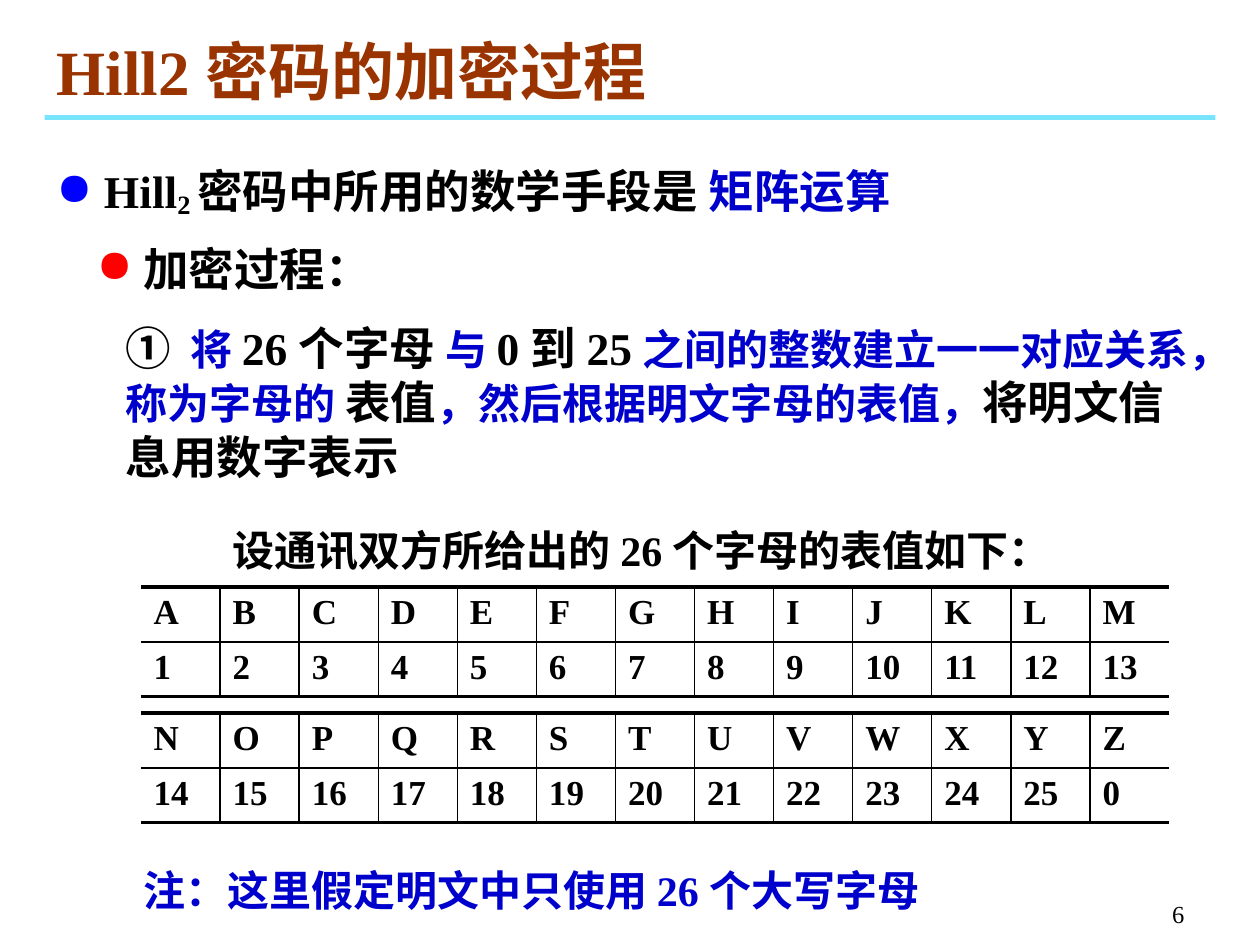
from lxml import etree
from pptx import Presentation
from pptx.dml.color import RGBColor
from pptx.enum.shapes import MSO_SHAPE
from pptx.enum.text import MSO_ANCHOR, MSO_AUTO_SIZE, PP_ALIGN
from pptx.oxml.ns import qn
from pptx.util import Pt

RECTANGLE = MSO_SHAPE.RECTANGLE
LEFT, CENTER, RIGHT = PP_ALIGN.LEFT, PP_ALIGN.CENTER, PP_ALIGN.RIGHT
TOP, BOTTOM = MSO_ANCHOR.TOP, MSO_ANCHOR.BOTTOM
GROW, FIXED = MSO_AUTO_SIZE.SHAPE_TO_FIT_TEXT, MSO_AUTO_SIZE.NONE
TITLE_ONLY = 5

SERIF = "Times New Roman"
BLACK, BLUE, BROWN = "000000", "0000CC", "993300"
THICK, THIN = 2.25, 1
COLUMN_WIDTH, ROW_HEIGHT = 45.2, 31.3


def color(value):
    return RGBColor.from_string(value)


def add_element(parent, tag, **attributes):
    element = etree.SubElement(parent, qn(tag))
    for name, value in attributes.items():
        element.set(name, str(value))
    return element


def add_span(para, text, size, fill=BLACK, font=SERIF, bold=True, baseline=0):
    span = para.add_run()
    span.text = text
    values = {"size": Pt(size), "name": font, "bold": bold}
    for name, value in values.items():
        setattr(span.font, name, value)
    span.font.color.rgb = color(fill)
    if baseline:
        span.font._element.set("baseline", str(baseline * 1000))


def add_bullet(para, fill):
    properties = para._p.get_or_add_pPr()
    properties.set("marL", "0")
    properties.set("indent", "0")
    bullet_color = add_element(properties, "a:buClr")
    add_element(bullet_color, "a:srgbClr", val=fill)
    add_element(properties, "a:buChar", char="●")


def place(box, bounds):
    for name, value in zip(("left", "top", "width", "height"), bounds):
        setattr(box, name, Pt(value))


def fill_text(box, spans, align=LEFT, anchor=TOP, spacing=None, bullet=None, fit=GROW):
    frame = box.text_frame
    values = {"word_wrap": True, "auto_size": fit, "vertical_anchor": anchor}
    for name, value in values.items():
        setattr(frame, name, value)
    para = frame.paragraphs[0]
    para.alignment = align
    if spacing:
        para.line_spacing = spacing
    if bullet:
        add_bullet(para, bullet)
    for span in spans:
        add_span(para, **span)


def add_text(page, bounds, spans, **layout):
    box = page.shapes.add_textbox(*map(Pt, bounds))
    fill_text(box, spans, **layout)


def add_rule(page):
    rule = page.shapes.add_shape(RECTANGLE, *map(Pt, (25.5, 65.8, 669, 2.7)))
    rule.shadow.inherit = False
    rule.fill.solid()
    rule.fill.fore_color.rgb = color("00CCFF")
    rule.line.fill.background()
    swatch = rule._element.spPr.find(".//" + qn("a:srgbClr"))
    add_element(swatch, "a:alpha", val=53000)


def set_borders(cell, widths):
    properties = cell._tc.get_or_add_tcPr()
    for position, (side, width) in enumerate(widths.items()):
        line = etree.Element(qn("a:ln" + side))
        properties.insert(position, line)
        if width:
            line.set("w", str(Pt(width)))
            fill = add_element(line, "a:solidFill")
            add_element(fill, "a:srgbClr", val=BLACK)
        else:
            add_element(line, "a:noFill")


def add_letter_table(page, top, letters, numbers):
    count = len(letters)
    bounds = (80.6, top, count * COLUMN_WIDTH, 2 * ROW_HEIGHT)
    table = page.shapes.add_table(2, count, *map(Pt, bounds)).table
    table.first_row = False
    table.horz_banding = False
    for column in table.columns:
        column.width = Pt(COLUMN_WIDTH)
    for row, values in enumerate((letters, numbers)):
        table.rows[row].height = Pt(ROW_HEIGHT)
        for index, value in enumerate(values):
            cell = table.cell(row, index)
            cell.fill.background()
            add_span(cell.text_frame.paragraphs[0], str(value), 20)
            set_borders(cell, {
                "L": THIN if index else 0,
                "R": THIN if index < count - 1 else 0,
                "T": THIN if row else THICK,
                "B": THICK if row else THIN,
            })


def main():
    deck = Presentation()
    deck.slide_width, deck.slide_height = Pt(720), Pt(540)
    page = deck.slides.add_slide(deck.slide_layouts[TITLE_ONLY])

    add_rule(page)
    title = page.shapes.title
    place(title, (25.2, 15.1, 420, 50.4))
    fill_text(title, [dict(text="Hill2 密码的加密过程", size=36, fill=BROWN)], anchor=BOTTOM)

    add_text(page, (534, 498, 150, 36), [dict(text="6", size=14, bold=False)],
             align=RIGHT, anchor=BOTTOM, fit=FIXED)
    add_text(page, (25.2, 82.8, 612, 44.6), [
        dict(text=" Hill", size=26),
        dict(text="2 ", size=26, baseline=-15),
        dict(text="密码中所用的数学手段是 ", size=26),
        dict(text="矩阵运算", size=26, fill=BLUE),
    ], spacing=1.2, bullet="0000FF")
    add_text(page, (48.2, 128.2, 612, 44.6), [dict(text=" 加密过程：", size=26)],
             spacing=1.2, bullet="FF0000")
    add_text(page, (64.8, 179.3, 629.3, 100.8), [
        dict(text="①", size=26, font="Lato"),
        dict(text="  ", size=24, font="Lato"),
        dict(text="将 ", size=24, fill=BLUE),
        dict(text="26 个字母", size=26),
        dict(text=" 与 ", size=24, fill=BLUE),
        dict(text="0 到 25", size=26),
        dict(text=" 之间的整数建立一一对应关系，称为字母的 ", size=24, fill=BLUE),
        dict(text="表值", size=26),
        dict(text="，然后根据明文字母的表值，", size=24, fill=BLUE),
        dict(text="将明文信息用数字表示", size=26),
    ])

    add_letter_table(page, 335.5, "ABCDEFGHIJKLM", range(1, 14))
    add_letter_table(page, 407.5, "NOPQRSTUVWXYZ", [*range(14, 26), 0])

    add_text(page, (120.2, 290.2, 493.2, 41.8),
             [dict(text="设通讯双方所给出的 26 个字母的表值如下：", size=24)],
             align=CENTER, spacing=1.2)
    add_text(page, (74.9, 484.6, 493.2, 41.8),
             [dict(text="注：这里假定明文中只使用 26 个大写字母", size=24, fill=BLUE)],
             spacing=1.2)
    deck.save("out.pptx")


if __name__ == "__main__":
    main()
